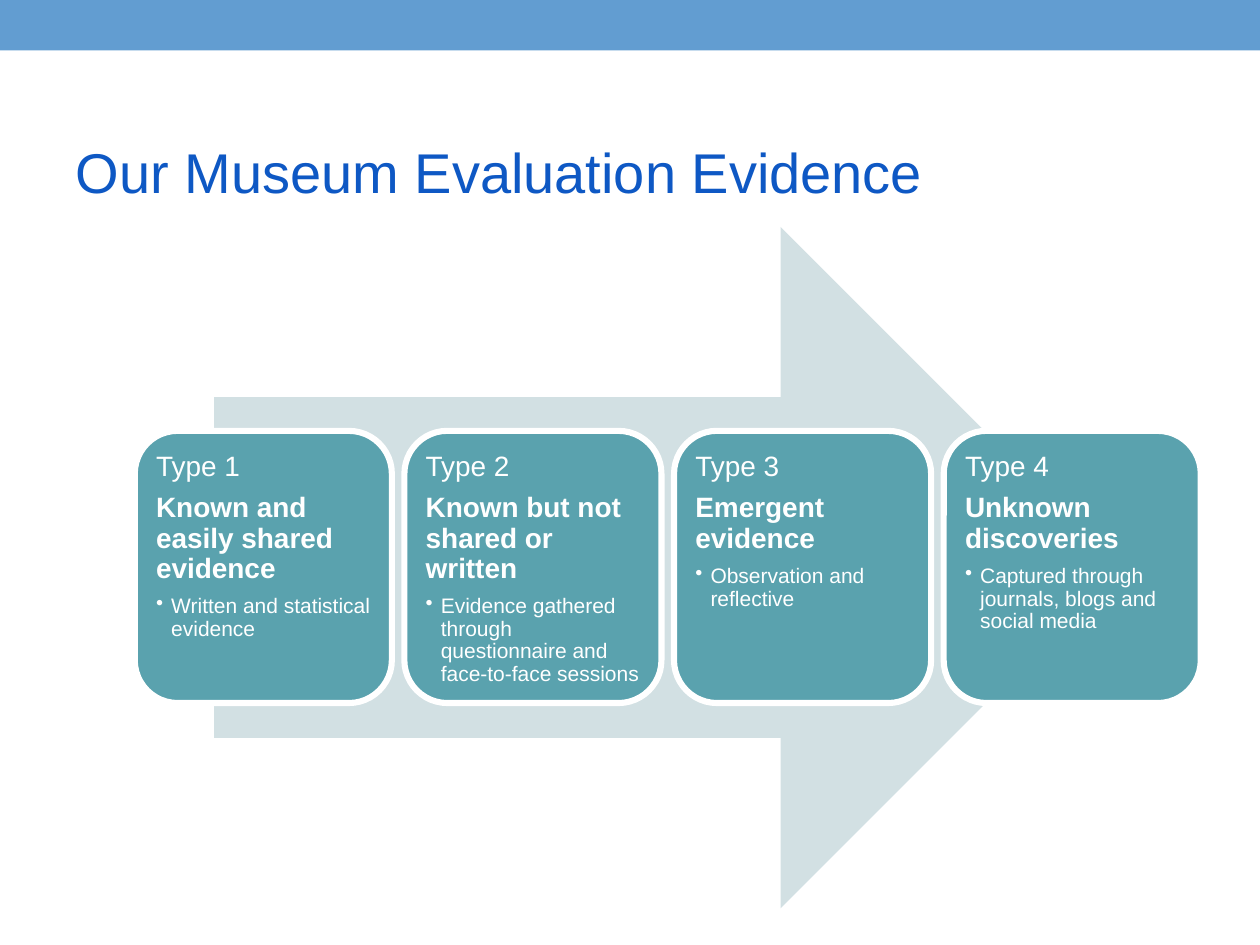
from lxml import etree
from pptx import Presentation
from pptx.dml.color import RGBColor
from pptx.enum.shapes import MSO_SHAPE
from pptx.enum.text import MSO_ANCHOR, PP_ALIGN
from pptx.oxml.ns import qn
from pptx.util import Inches, Pt

RECT, ARROW, CARD = MSO_SHAPE.RECTANGLE, MSO_SHAPE.RIGHT_ARROW, MSO_SHAPE.ROUNDED_RECTANGLE
LEFT, TOP, MIDDLE = PP_ALIGN.LEFT, MSO_ANCHOR.TOP, MSO_ANCHOR.MIDDLE

FONT = "Arial"
WHITE, BAND, TITLE, PALE, TEAL = "FFFFFF", "629DD1", "0E58C4", "D2E0E3", "5AA2AE"

EVIDENCE_TYPES = [
    ("Type 1", "Known and easily shared evidence", "Written and statistical evidence"),
    ("Type 2", "Known but not shared or written",
     "Evidence gathered through questionnaire and face-to-face sessions"),
    ("Type 3", "Emergent evidence", "Observation and reflective"),
    ("Type 4", "Unknown discoveries", "Captured through journals, blogs and social media"),
]


def rgb(value):
    return RGBColor.from_string(value)


def add_shape(s, kind, box, fill, line=None):
    sp = s.shapes.add_shape(kind, *(Inches(v) for v in box))
    sp.shadow.inherit = False
    sp.fill.solid()
    sp.fill.fore_color.rgb = rgb(fill)
    if line:
        sp.line.color.rgb = rgb(line)
        sp.line.width = Pt(3.5)
    else:
        sp.line.fill.background()
    return sp


def format_paragraph(p, size, color, bold=False):
    p.alignment = LEFT
    font = p.runs[0].font
    font.name, font.size, font.bold = FONT, Pt(size), bold
    font.color.rgb = rgb(color)


def add_bullet(p, indent):
    pPr = p._p.get_or_add_pPr()
    pPr.set("marL", str(Inches(indent)))
    pPr.set("indent", str(-Inches(indent)))
    etree.SubElement(pPr, qn("a:buChar")).set("char", "•")


def place_title(s, box, text):
    title = s.shapes.title
    title.left, title.top, title.width, title.height = (Inches(v) for v in box)
    tf = title.text_frame
    tf.text = text
    tf.word_wrap = True
    tf.vertical_anchor = MIDDLE
    format_paragraph(tf.paragraphs[0], 32, TITLE)


def add_card(s, box, texts):
    tf = add_shape(s, CARD, box, TEAL, WHITE).text_frame
    tf.word_wrap = True
    tf.vertical_anchor = TOP
    tf.margin_left = tf.margin_right = tf.margin_top = tf.margin_bottom = Inches(0.07)
    # Label, bold heading, bulleted detail
    styles = [(16, False, 6.4), (16, True, 6.4), (12, False, 2)]
    for i, (text, (size, bold, after)) in enumerate(zip(texts, styles)):
        p = tf.add_paragraph() if i else tf.paragraphs[0]
        p.text = text
        p.line_spacing = 0.9
        p.space_after = Pt(after)
        format_paragraph(p, size, WHITE, bold)
    p.level = 1
    add_bullet(p, 0.12)


def add_process(s, box, gap):
    left, top, width, height = box
    # Arrow behind the cards
    add_shape(s, ARROW, (1.7, 1.8, 7.2, 5.41), PALE)
    # Equal cards in one row
    count = len(EVIDENCE_TYPES)
    card_width = (width - gap * (count - 1)) / count
    for i, texts in enumerate(EVIDENCE_TYPES):
        add_card(s, (left + i * (card_width + gap), top, card_width, height), texts)


def main():
    prs = Presentation()
    prs.slide_width, prs.slide_height = Inches(10), Inches(7.5)
    s = prs.slides.add_slide(prs.slide_layouts[5])
    add_shape(s, RECT, (0, 0, 10, 0.4), BAND)
    place_title(s, (0.5, 1.04, 8.07, 0.64), "Our Museum Evaluation Evidence")
    add_process(s, (1.07, 3.42, 8.46, 2.16), gap=0.1)
    prs.save("out.pptx")


if __name__ == "__main__":
    main()
